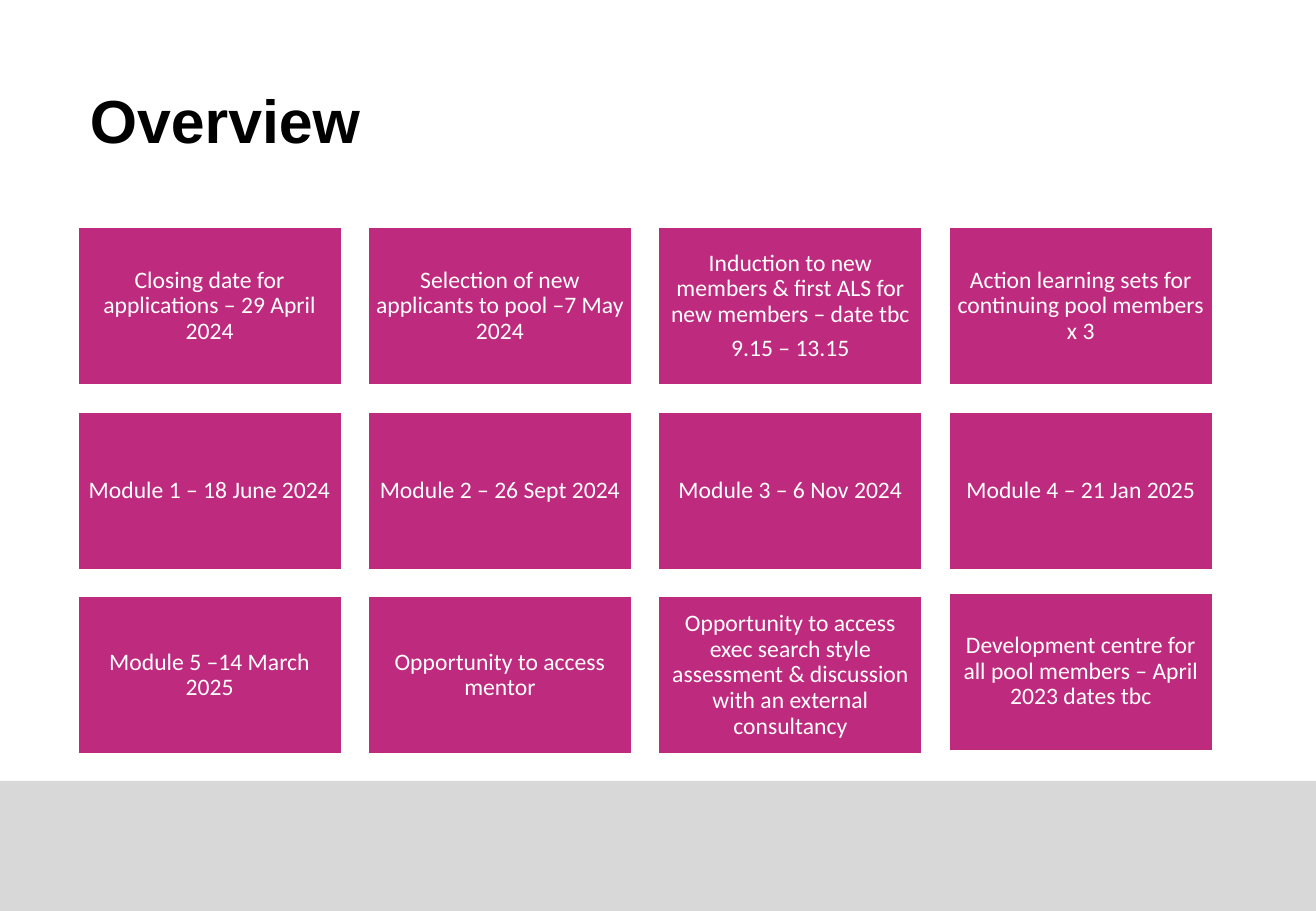
"""Build the programme overview slide: a title above a grid of milestone boxes."""
from dataclasses import dataclass

from pptx import Presentation
from pptx.dml.color import RGBColor
from pptx.enum.shapes import MSO_SHAPE
from pptx.enum.text import MSO_ANCHOR, MSO_AUTO_SIZE, PP_ALIGN
from pptx.util import Inches, Pt

RECT = MSO_SHAPE.RECTANGLE
MIDDLE = MSO_ANCHOR.MIDDLE
NO_FIT = MSO_AUTO_SIZE.NONE
LEFT, CENTER = PP_ALIGN.LEFT, PP_ALIGN.CENTER


@dataclass(frozen=True)
class Theme:
    box: RGBColor = RGBColor.from_string("BE2A7E")
    band: RGBColor = RGBColor.from_string("D7D8D7")
    white: RGBColor = RGBColor.from_string("FFFFFF")
    black: RGBColor = RGBColor.from_string("000000")
    title_size: int = 36
    box_size: int = 14


theme = Theme()
WIDTH, HEIGHT = 10.83, 7.5
GRID_LEFT, GRID_TOP = 0.64, 1.87
COL_STEP, ROW_STEP = 2.39, 1.52
BOX_W, BOX_H = 2.17, 1.3
BAND_TOP = 6.43
NUDGE = {(2, 3): -0.03}

MILESTONES = [
    [
        "Closing date for applications – 29 April 2024",
        "Selection of new applicants to pool –7 May 2024",
        "Induction to new members & first ALS for new members – date tbc\n9.15 – 13.15",
        "Action learning sets for continuing pool members x 3",
    ],
    [
        "Module 1 – 18 June 2024",
        "Module 2 – 26 Sept 2024",
        "Module 3 – 6 Nov 2024",
        "Module 4 – 21 Jan 2025",
    ],
    [
        "Module 5 –14 March 2025",
        "Opportunity to access mentor",
        "Opportunity to access exec search style assessment & discussion "
        "with an external consultancy",
        "Development centre for all pool members – April 2023 dates tbc",
    ],
]


def write(tf, text, *, font, size, color, align, bold=False, after=0):
    tf.word_wrap = True
    tf.auto_size = NO_FIT
    tf.vertical_anchor = MIDDLE
    tf.text = text
    for p in tf.paragraphs:
        p.alignment = align
        p.line_spacing = 0.9
        p.space_before = Pt(0)
        p.space_after = Pt(after)
        for r in p.runs:
            r.font.name = font
            r.font.size = Pt(size)
            r.font.bold = bold
            r.font.color.rgb = color


def add_rect(s, left, top, width, height, fill):
    sp = s.shapes.add_shape(RECT, Inches(left), Inches(top), Inches(width), Inches(height))
    sp.shadow.inherit = False
    sp.fill.solid()
    sp.fill.fore_color.rgb = fill
    sp.line.fill.background()
    return sp


prs = Presentation()
prs.slide_width, prs.slide_height = Inches(WIDTH), Inches(HEIGHT)
s = prs.slides.add_slide(prs.slide_layouts[5])

add_rect(s, 0, BAND_TOP, WIDTH, HEIGHT - BAND_TOP, theme.band)

title = s.shapes.title
title.left, title.top = Inches(GRID_LEFT), Inches(0.69)
title.width, title.height = Inches(3 * COL_STEP + BOX_W), Inches(0.66)
write(title.text_frame, "Overview", font="Arial", size=theme.title_size,
      color=theme.black, align=LEFT, bold=True)

for row, texts in enumerate(MILESTONES):
    for col, text in enumerate(texts):
        top = GRID_TOP + row * ROW_STEP + NUDGE.get((row, col), 0)
        sp = add_rect(s, GRID_LEFT + col * COL_STEP, top, BOX_W, BOX_H, theme.box)
        sp.line.color.rgb = theme.white
        sp.line.width = Pt(1)
        tf = sp.text_frame
        tf.margin_left = tf.margin_right = tf.margin_top = tf.margin_bottom = Inches(0.06)
        write(tf, text, font="Calibri", size=theme.box_size, color=theme.white,
              align=CENTER, after=5)

prs.save("out.pptx")
